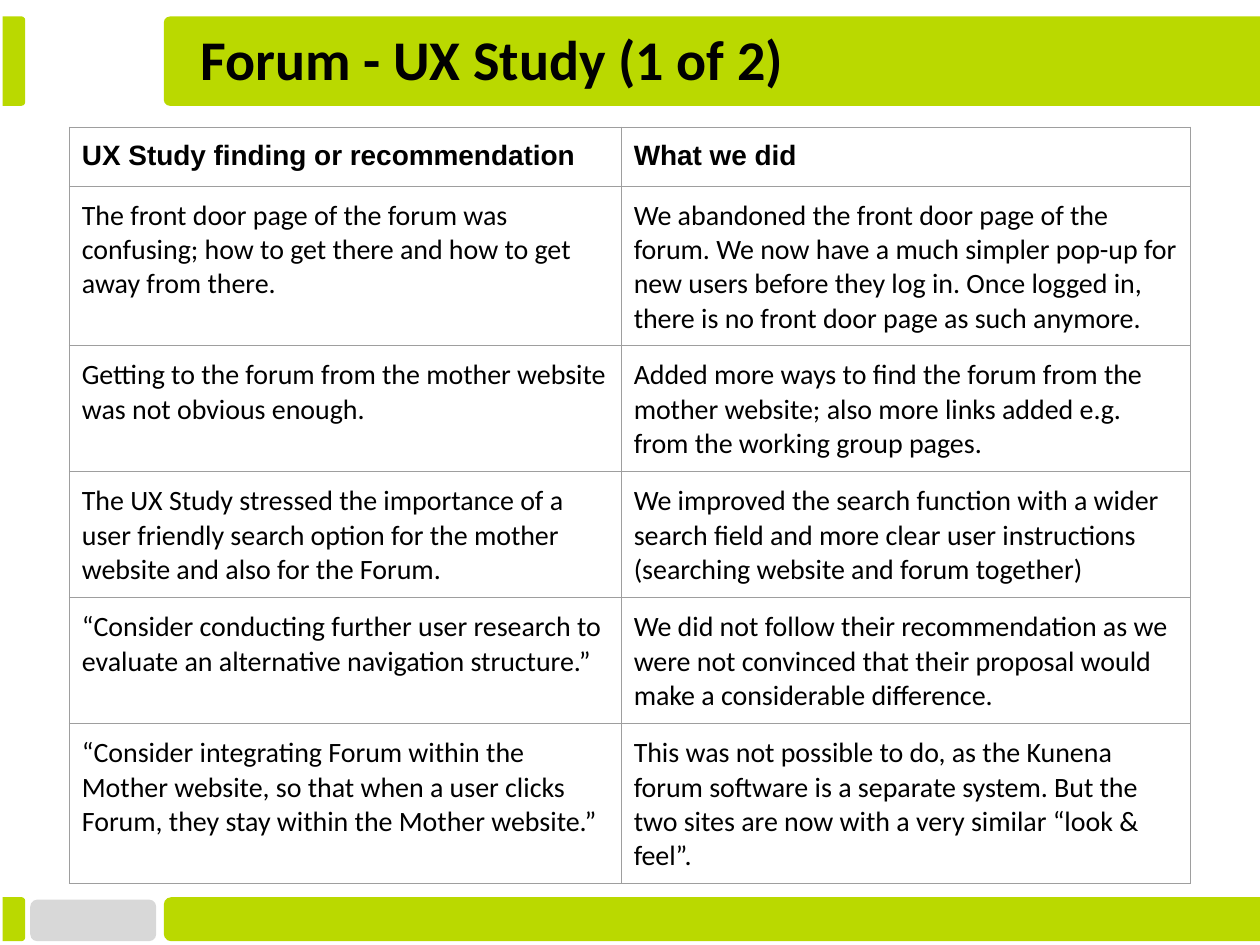
from dataclasses import dataclass

from lxml import etree
from pptx import Presentation
from pptx.dml.color import RGBColor
from pptx.enum.shapes import MSO_SHAPE
from pptx.enum.text import MSO_ANCHOR
from pptx.oxml.ns import qn
from pptx.util import Inches, Pt


@dataclass(frozen=True)
class Theme:
    lime: str = "BAD900"
    gray: str = "D8D8D8"
    ink: str = "000000"
    grid: str = "9E9E9E"
    grid_width: float = 0.75
    title_size: int = 32
    table_size: int = 16
    body_font: str = "Calibri"
    header_font: str = "Arial"
    inset: float = 0.1


THEME = Theme()

HEADER = ("UX Study finding or recommendation", "What we did")
FINDINGS = [
    ("The front door page of the forum was confusing; how to get there and how to get "
     "away from there.",
     "We abandoned the front door page of the forum. We now have a much simpler pop-up "
     "for new users before they log in. Once logged in, there is no front door page as "
     "such anymore."),
    ("Getting to the forum from the mother website was not obvious enough.",
     "Added more ways to find the forum from the mother website; also more links added "
     "e.g. from the working group pages."),
    ("The UX Study stressed the importance of a user friendly search option for the "
     "mother website and also for the Forum.",
     "We improved the search function with a wider search field and more clear user "
     "instructions (searching website and forum together)"),
    ("“Consider conducting further user research to evaluate an alternative navigation "
     "structure.”",
     "We did not follow their recommendation as we were not convinced that their "
     "proposal would make a considerable difference."),
    ("“Consider integrating Forum within the Mother website, so that when a user clicks "
     "Forum, they stay within the Mother website.”",
     "This was not possible to do, as the Kunena forum software is a separate system. "
     "But the two sites are now with a very similar “look & feel”."),
]


def style_font(font, size, name, bold):
    font.size = Pt(size)
    font.name = name
    font.bold = bold
    font.color.rgb = RGBColor.from_string(THEME.ink)


def set_insets(holder):
    holder.margin_left = holder.margin_right = Inches(THEME.inset)
    holder.margin_top = holder.margin_bottom = Inches(THEME.inset)


def add_block(slide, preset, box, color, radii):
    block = slide.shapes.add_shape(preset, *(Inches(length) for length in box))
    block.shadow.inherit = False
    block.fill.solid()
    block.fill.fore_color.rgb = RGBColor.from_string(color)
    block.line.fill.background()
    for index, radius in enumerate(radii):
        block.adjustments[index] = radius
    return block


def add_side_bar(slide, box, rotation, radius):
    """Fill the box with a bar turned so that its rounded end faces sideways."""
    left, top, width, height = box
    shift = (width - height) / 2
    unrotated = (left + shift, top - shift, height, width)
    bar = add_block(slide, MSO_SHAPE.ROUND_2_SAME_RECTANGLE, unrotated,
                    THEME.lime, (radius, 0))
    bar.rotation = rotation


def add_band(slide, box, radius):
    """Stub at the left edge and long bar to the right edge, with a gap between."""
    left, top, width, height = box
    stub_width, bar_offset = 0.18, 1.28
    add_side_bar(slide, (left, top, stub_width, height), 90, 0.17)
    add_side_bar(slide, (left + bar_offset, top, width - bar_offset, height), 270, radius)


def add_title(slide, box):
    title = slide.shapes.add_textbox(*(Inches(length) for length in box))
    frame = title.text_frame
    frame.word_wrap = True
    frame.vertical_anchor = MSO_ANCHOR.MIDDLE
    set_insets(frame)
    heading = frame.paragraphs[0]
    heading.text = "Forum - UX Study (1 of 2)"
    heading.line_spacing = 0.9
    style_font(heading.font, THEME.title_size, THEME.body_font, True)


def add_borders(cell):
    properties = cell._tc.get_or_add_tcPr()
    for index, side in enumerate(("lnL", "lnR", "lnT", "lnB")):
        line = etree.Element(qn(f"a:{side}"), w=str(Pt(THEME.grid_width)))
        fill = etree.SubElement(line, qn("a:solidFill"))
        etree.SubElement(fill, qn("a:srgbClr"), val=THEME.grid)
        properties.insert(index, line)


def add_findings_table(slide, left, top):
    column_widths, row_height = (4.38, 4.52), 0.42  # rows grow to fit their text
    rows = [HEADER, *FINDINGS]
    table = slide.shapes.add_table(
        len(rows), len(HEADER), Inches(left), Inches(top),
        Inches(sum(column_widths)), Inches(row_height * len(rows))).table
    table.first_row = table.horz_banding = False
    for column, width in zip(table.columns, column_widths):
        column.width = Inches(width)
    for row_index, (row, wordings) in enumerate(zip(table.rows, rows)):
        row.height = Inches(row_height)
        is_header = row_index == 0
        font_name = THEME.header_font if is_header else THEME.body_font
        for cell, wording in zip(row.cells, wordings):
            cell.fill.background()
            set_insets(cell)
            add_borders(cell)
            cell.text = wording
            style_font(cell.text_frame.paragraphs[0].font, THEME.table_size,
                       font_name, is_header)


def main():
    deck = Presentation()
    deck.slide_width, deck.slide_height = Inches(10), Inches(7.5)
    slide = deck.slides.add_slide(deck.slide_layouts[6])

    # Footer: gray tab and lime band
    add_block(slide, MSO_SHAPE.ROUNDED_RECTANGLE, (0.24, 7.14, 1, 0.33),
              THEME.gray, (0.17,))
    add_band(slide, (0.02, 7.12, 9.98, 0.35), 0.17)

    # Header: lime band and title
    add_band(slide, (0.02, 0.13, 9.98, 0.71), 0.07)
    add_title(slide, (1.49, 0.17, 9.42, 0.65))

    # Study findings
    add_findings_table(slide, 0.55, 1.01)

    deck.save("out.pptx")


if __name__ == "__main__":
    main()
